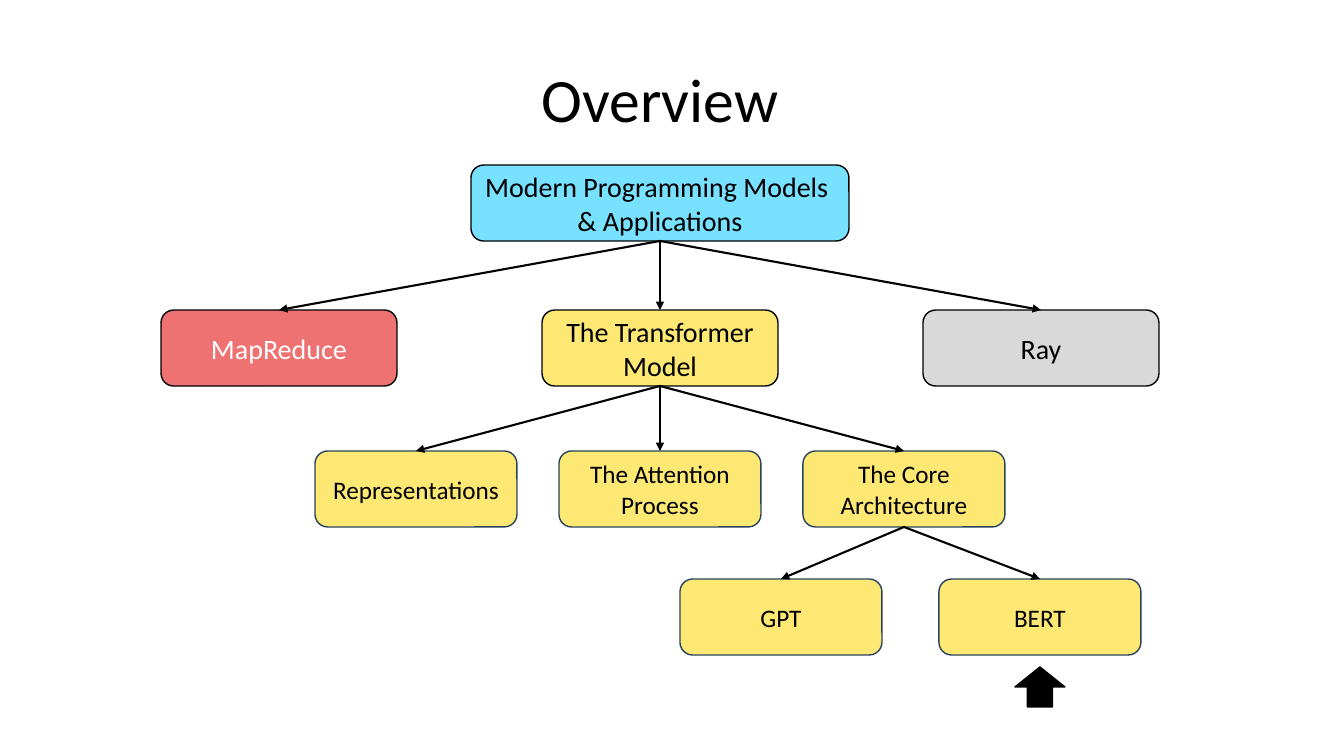
import pptx
import pptx.util
import pptx.dml.color
import pptx.enum.shapes
import pptx.enum.text
import pptx.oxml.ns
from lxml import etree

# Content: lengths in px, 100.8 px to the inch
TITLE = "Overview"
BLACK, WHITE, NAVY = "000000", "FFFFFF", "28445D"
BLUE, RED, YELLOW, GRAY = "77E1FF", "EF7273", "FCE873", "D9D9D9"

# Each level: top, box width, text size, outline, boxes (text, centre, fill, parent)
MIDDLE = 660
TOPIC_STEP, PART_STEP = 381, 244
ROOT = "Modern Programming Models \v& Applications"
TRANSFORMER = "The Transformer Model"
CORE = "The Core Architecture"
LEVELS = [
    (165, 378, 20, BLACK, [(ROOT, MIDDLE, BLUE, None)]),
    (310, 236, 20, BLACK, [
        ("MapReduce", MIDDLE - TOPIC_STEP, RED, ROOT),
        (TRANSFORMER, MIDDLE, YELLOW, ROOT),
        ("Ray", MIDDLE + TOPIC_STEP, GRAY, ROOT),
    ]),
    (451, 202, 18, NAVY, [
        ("Representations", MIDDLE - PART_STEP, YELLOW, TRANSFORMER),
        ("The Attention Process", MIDDLE, YELLOW, TRANSFORMER),
        (CORE, MIDDLE + PART_STEP, YELLOW, TRANSFORMER),
    ]),
    (579, 202, 18, NAVY, [
        ("GPT", 781, YELLOW, CORE),
        ("BERT", 1040, YELLOW, CORE),
    ]),
]
BOX_HEIGHT = 76
MARKER = (1040, 667, 50, 40)  # centre, top, width, height

SHAPES = pptx.enum.shapes.MSO_SHAPE
CENTER = pptx.enum.text.PP_ALIGN.CENTER
ANCHOR_MIDDLE = pptx.enum.text.MSO_ANCHOR.MIDDLE


def px(length):
    return pptx.util.Emu(round(length * 914400 / 100.8))


def color(value):
    return pptx.dml.color.RGBColor.from_string(value)


def set_text(shape, text, size, text_color):
    frame = shape.text_frame
    frame.word_wrap = True
    frame.vertical_anchor = ANCHOR_MIDDLE
    frame.text = text
    para = frame.paragraphs[0]
    para.alignment = CENTER
    para.font.name = "Calibri"
    para.font.size = pptx.util.Pt(size)
    para.font.color.rgb = color(text_color)
    return para


def add_shape(kind, center, top, width, height, fill, outline):
    shape = page.shapes.add_shape(
        kind, px(center - width / 2), px(top), px(width), px(height))
    shape.shadow.inherit = False
    shape.fill.solid()
    shape.fill.fore_color.rgb = color(fill)
    shape.line.color.rgb = color(outline)
    shape.line.width = pptx.util.Pt(1)
    return shape


def add_arrow(parent, child):
    arrow = page.shapes.add_connector(
        pptx.enum.shapes.MSO_CONNECTOR.STRAIGHT, 0, 0, 0, 0)
    arrow.begin_connect(parent, 2)
    arrow.end_connect(child, 0)
    arrow.line.color.rgb = color(BLACK)
    arrow.line.width = pptx.util.Pt(1.5)
    qn = pptx.oxml.ns.qn
    etree.SubElement(arrow.line._get_or_add_ln(), qn("a:tailEnd"), type="triangle")
    etree.SubElement(arrow._element.spPr, qn("a:effectLst"))


deck = pptx.Presentation()
deck.slide_width, deck.slide_height = px(1344), px(756)
page = deck.slides.add_slide(deck.slide_layouts[5])

# Title
title = page.shapes.title
title.left, title.top, title.width, title.height = map(px, (194, 30, 932, 146))
set_text(title, TITLE, 44, BLACK).line_spacing = 0.9

# Tree of boxes, each joined to its parent
boxes = {}
for top, width, size, outline, entries in LEVELS:
    for text, center, fill, parent in entries:
        box = add_shape(SHAPES.ROUNDED_RECTANGLE, center, top, width, BOX_HEIGHT,
                        fill, outline)
        set_text(box, text, size, WHITE if fill == RED else BLACK)
        boxes[text] = box
        if parent:
            add_arrow(boxes[parent], box)

# Marker under the current topic
add_shape(SHAPES.UP_ARROW, *MARKER, BLACK, BLACK)

deck.save("out.pptx")
